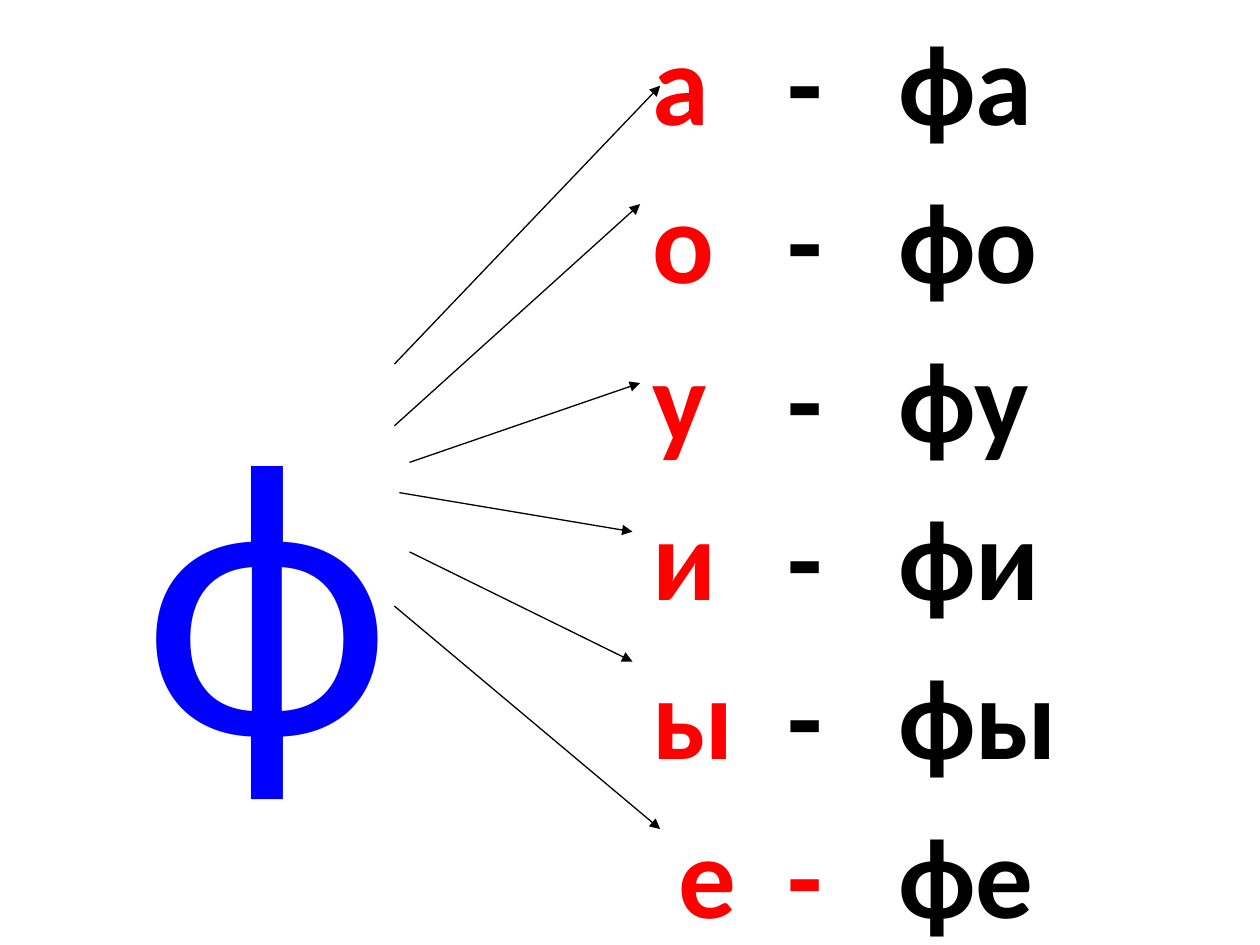
from lxml import etree
from pptx import Presentation
from pptx.dml.color import RGBColor
from pptx.enum.shapes import MSO_CONNECTOR
from pptx.oxml.ns import qn
from pptx.util import Inches, Pt

COLORS = {"blue": "0000FF", "red": "FF0000", "black": "000000"}
FONT = "Calibri"

# Content: (red part, black part) of each row, split by tabs
LETTER = "ф"
ROWS = [
    ("а", "\t-\tфа"),
    ("о", "\t-\tфо"),
    ("у", "\t-\tфу"),
    ("и", "\t-\tфи"),
    ("ы", "\t-\tфы"),
    (" е\t-", "\tфе"),
]
TABS = [1.07, 1.95]

# Arrows: start x, start y, end x, end y
ARROWS = [
    (3.13, 2.89, 5.24, 0.68),
    (3.13, 3.38, 5.08, 1.62),
    (3.25, 3.67, 5.08, 3.04),
    (3.17, 3.91, 5.02, 4.22),
    (3.25, 4.38, 5.02, 5.25),
    (3.13, 4.81, 5.24, 6.58),
]


def add_frame(slide, box, top):
    frame = slide.shapes.add_textbox(*map(Inches, box)).text_frame
    frame.word_wrap = True
    frame.margin_top = Inches(top)
    return frame


def add_run(para, text, size, color, bold=False):
    run = para.add_run()
    run.text = text
    font = run.font
    font.name, font.size, font.bold = FONT, Pt(size), bold
    font.color.rgb = RGBColor.from_string(COLORS[color])


def set_tabs(para):
    tabs = etree.SubElement(para._p.get_or_add_pPr(), qn("a:tabLst"))
    for pos in TABS:
        etree.SubElement(tabs, qn("a:tab"), pos=str(Inches(pos)), algn="l")


def add_arrow(slide, ends):
    arrow = slide.shapes.add_connector(
        MSO_CONNECTOR.STRAIGHT, *map(Inches, ends))
    arrow.line.width = Pt(0.75)
    arrow.line.color.rgb = RGBColor.from_string(COLORS["black"])
    etree.SubElement(arrow.line._get_or_add_ln(), qn("a:tailEnd"),
                     type="triangle")
    etree.SubElement(arrow._element.spPr, qn("a:effectLst"))


def main():
    deck = Presentation()
    deck.slide_width, deck.slide_height = Inches(10), Inches(7.5)
    slide = deck.slides.add_slide(deck.slide_layouts[6])

    # Large consonant
    frame = add_frame(slide, (1.04, 2.5, 2.2, 4.6), 0.18)
    add_run(frame.paragraphs[0], LETTER, 226.8, "blue")

    # Vowels and syllables
    frame = add_frame(slide, (5.08, 0, 4.65, 7.21), 0.08)
    for i, (vowel, rest) in enumerate(ROWS):
        para = frame.add_paragraph() if i else frame.paragraphs[0]
        para.space_before = Pt(11.8 if i else 0)
        set_tabs(para)
        add_run(para, vowel, 65.7, "red", True)
        add_run(para, rest, 65.7, "black", True)

    # Arrows from the consonant to each vowel
    for ends in ARROWS:
        add_arrow(slide, ends)

    deck.save("out.pptx")


if __name__ == "__main__":
    main()
